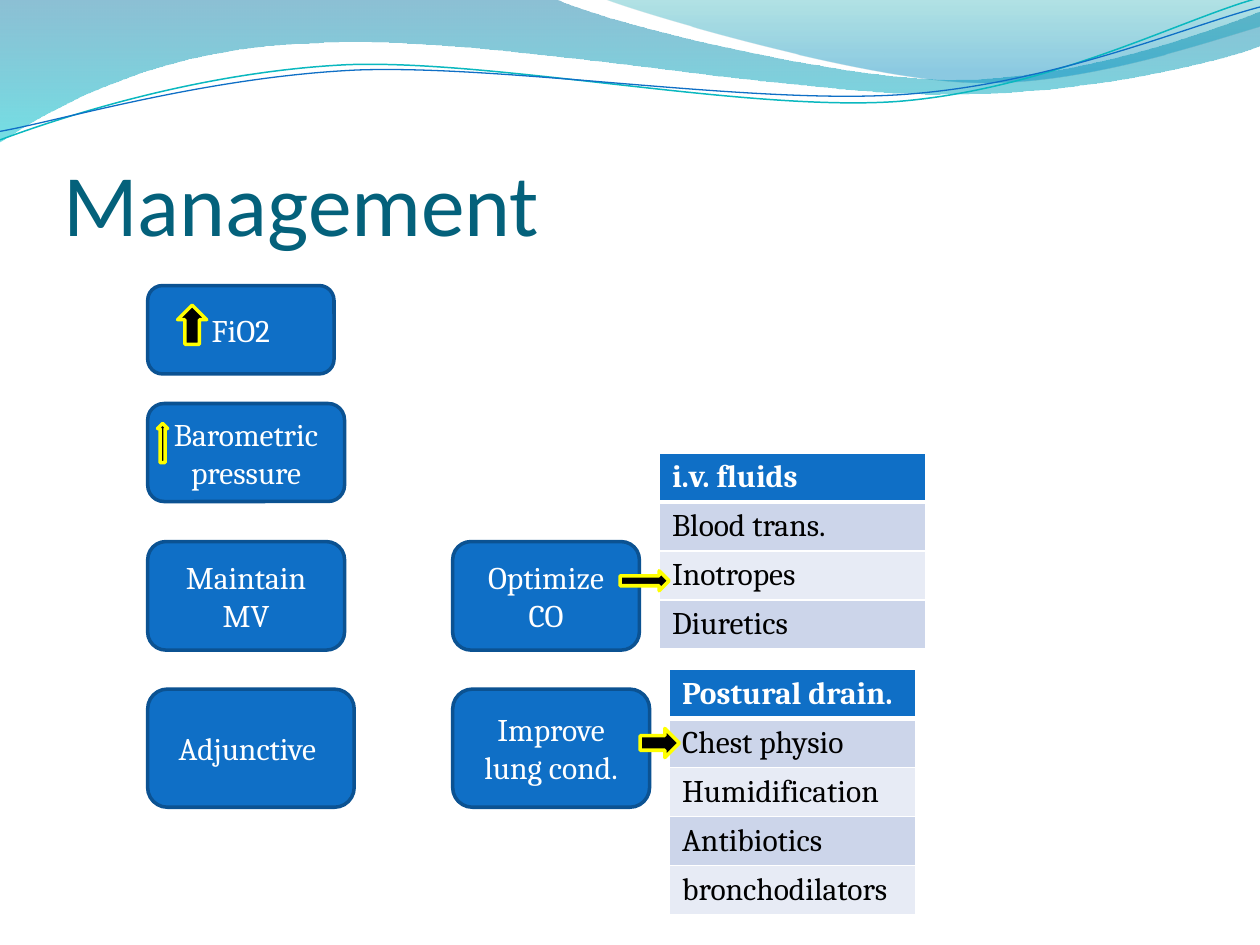
from lxml.etree import SubElement
from pptx import Presentation
from pptx.dml.color import RGBColor
from pptx.enum.shapes import MSO_SHAPE as SHAPE
from pptx.enum.text import MSO_ANCHOR as ANCHOR, PP_ALIGN as ALIGN
from pptx.oxml.ns import qn
from pptx.util import Pt

COLORS = {
    "title": "04617B", "blue": "0F6FC6", "edge": "0B5292", "white": "FFFFFF",
    "black": "000000", "yellow": "FFFF00", "band": "CCD5EA", "pale": "E7EBF5",
    "deep": "0074A1", "aqua": "00C6CF", "teal": "00A1A9", "sky": "008BBF",
    "strand": "0AB8BF",
}
WAVES = [
    ([(0, 0), (317, -0.7), (343, 12.2, 478, 45.4, 546, 45.4),
      (614, 45.4, 690, 18.7, 720, 6.5), (720.7, 26),
      (708, 31.7, 626, 54.7, 537, 54), (448, 54, 275, 20.2, 185, 24.5),
      (93, 26, 33, 59.8, -0.7, 81.4)],
     [(0, "deep", 45), (1, "aqua", 55)]),
    ([(345, -0.7), (366.5, 8, 491, 44.6, 553.7, 46.8),
      (616.3, 49.7, 692, 23, 720, 15), (720, 0)],
     [(0, "teal", 30), (0.8, "sky", 45)]),
]
STRANDS = [
    ([(-1.4, 63), (34.2, 51.7, 114.3, 29.4, 199.4, 29.4),
      (284.4, 30.5, 425.9, 67.2, 512, 65.2),
      (599.3, 62.3, 676.1, 25.9, 720.6, 15.9)], "strand", 0.85),
    ([(-1.1, 58.1), (33.1, 53.7, 118.2, 32.6, 204.3, 32.7),
      (290.3, 33.7, 429.1, 63.3, 515.3, 61.4),
      (601.5, 59.4, 678.9, 30, 721.4, 21)], "blue", 0.75),
]
BOXES = [
    ("FiO2", 84.4, 163.2, 106.5, 50.5),
    ("Barometric pressure", 84.4, 230.6, 112.5, 56),
    ("Maintain MV", 84.4, 309.5, 112.5, 62),
    ("Adjunctive ", 84.4, 393.8, 118, 67.5),
    ("Optimize CO", 258.7, 309.5, 106.7, 62),
    ("Improve lung cond.", 258.7, 393.8, 112.5, 67.5),
]
ARROWS = [
    (SHAPE.UP_ARROW, 101.5, 174.4, 16.6, 22.4),
    (SHAPE.UP_ARROW, 90, 242, 5.8, 22.4),
    (SHAPE.RIGHT_ARROW, 354.4, 326.2, 28, 11.4),
    (SHAPE.RIGHT_ARROW, 365.8, 416.3, 22.4, 16.6),
]
TABLES = [
    (["i.v. fluids", "Blood trans.", "Inotropes", "Diuretics"],
     376.8, 258.8, 152, 115.2, 24.5),
    (["Postural drain.", "Chest physio", "Humidification", "Antibiotics",
      "bronchodilators"], 382.6, 382.5, 140.6, 144, 21),
]


def rgb(name):
    """Return the named colour."""
    return RGBColor.from_string(COLORS[name])


def write(tf, text, font="Cambria", size=18, color="white", bold=False, align=ALIGN.LEFT):
    """Write one formatted paragraph into a text frame."""
    p = tf.paragraphs[0]
    p.alignment = align
    r = p.add_run()
    r.text = text
    r.font.name, r.font.size, r.font.bold = font, Pt(size), bold
    r.font.color.rgb = rgb(color)


def add_outline(slide, steps, left, top, close):
    """Draw an outline of lines (x, y) and cubic curves (three pairs)."""
    points = [(Pt(left + step[i]), Pt(top + step[i + 1]))
              for step in steps for i in range(0, len(step), 2)]
    builder = slide.shapes.build_freeform(*points[0], scale=1.0)
    builder.add_line_segments(points[1:], close=close)
    sp = builder.convert_to_shape()
    sp.shadow.inherit = False
    segments = iter(list(sp._element.iter(qn("a:lnTo"))))
    for step in steps[1:]:
        segment = next(segments)
        if len(step) == 6:
            segment.tag = qn("a:cubicBezTo")
            for _ in range(2):
                extra = next(segments)
                segment.append(extra[0])
                extra.getparent().remove(extra)
    return sp


def add_header(slide, left, top):
    """Draw the translucent waves and the thin tilted strands."""
    for steps, stops in WAVES:
        sp = add_outline(slide, steps, left, top, True)
        sp.line.fill.background()
        sp.fill.gradient()
        sp.fill.gradient_angle = 270
        for stop, (position, color, _) in zip(sp.fill.gradient_stops, stops):
            stop.position = position
            stop.color.rgb = rgb(color)
        for gs, (_, _, alpha) in zip(sp._element.iter(qn("a:gs")), stops):
            SubElement(gs[0], qn("a:alpha"), val=str(alpha * 1000))
    for steps, color, width in STRANDS:
        sp = add_outline(slide, steps, left, top, False)
        sp.rotation = 357.3
        sp.fill.background()
        sp.line.color.rgb = rgb(color)
        sp.line.width = Pt(width)


def add_title(slide, text, left, top, width, height):
    """Place and format the title placeholder in front of the header."""
    sp = slide.shapes.title
    slide.shapes._spTree.append(sp._element)
    sp.left, sp.top, sp.width, sp.height = map(Pt, (left, top, width, height))
    tf = sp.text_frame
    tf.margin_left = tf.margin_right = tf.margin_bottom = 0
    tf.margin_top = Pt(3.6)
    tf.vertical_anchor = ANCHOR.BOTTOM
    write(tf, text, font="Calibri", size=50, color="title")


def add_block(slide, kind, left, top, width, height, fill, line):
    """Add a filled preset shape with a 2 point outline."""
    sp = slide.shapes.add_shape(kind, *map(Pt, (left, top, width, height)))
    sp.shadow.inherit = False
    sp.fill.solid()
    sp.fill.fore_color.rgb = rgb(fill)
    sp.line.color.rgb = rgb(line)
    sp.line.width = Pt(2)
    return sp


def add_box(slide, text, left, top, width, height):
    """Add a rounded box with centred text."""
    sp = add_block(slide, SHAPE.ROUNDED_RECTANGLE, left, top, width, height, "blue", "edge")
    sp.text_frame.word_wrap = True
    sp.text_frame.vertical_anchor = ANCHOR.MIDDLE
    write(sp.text_frame, text, align=ALIGN.CENTER)


def set_borders(cell, **widths):
    """Give a cell white borders, 1 point unless stated."""
    tcPr = cell._tc.get_or_add_tcPr()
    for i, side in enumerate("LRTB"):
        ln = SubElement(tcPr, qn("a:ln" + side), w=str(Pt(widths.get(side, 1))))
        color = SubElement(SubElement(ln, qn("a:solidFill")), qn("a:srgbClr"))
        color.set("val", COLORS["white"])
        tcPr.insert(i, ln)


def add_list_table(slide, items, left, top, width, height, row_height):
    """Add a one-column table with a header and banded rows."""
    frame = slide.shapes.add_table(len(items), 1, *map(Pt, (left, top, width, height)))
    for i, (item, row) in enumerate(zip(items, frame.table.rows)):
        row.height = Pt(row_height)
        cell = row.cells[0]
        header = i == 0
        cell.fill.solid()
        cell.fill.fore_color.rgb = rgb("blue" if header else ("pale", "band")[i % 2])
        set_borders(cell, T=3 if i == 1 else 1, B=3 if header else 1)
        write(cell.text_frame, item, color="white" if header else "black", bold=header)
    frame.height = Pt(height)


def main():
    """Build and save the slide."""
    prs = Presentation()
    prs.slide_width, prs.slide_height = Pt(720), Pt(540)
    slide = prs.slides.add_slide(prs.slide_layouts[5])
    add_header(slide, 0, 0)
    add_title(slide, "Management", 36, 55.3, 648, 90)
    first_table, second_table = TABLES
    add_list_table(slide, *first_table)
    for box in BOXES:
        add_box(slide, *box)
    add_list_table(slide, *second_table)
    for arrow in ARROWS:
        add_block(slide, *arrow, "black", "yellow")
    prs.save("out.pptx")


if __name__ == "__main__":
    main()
